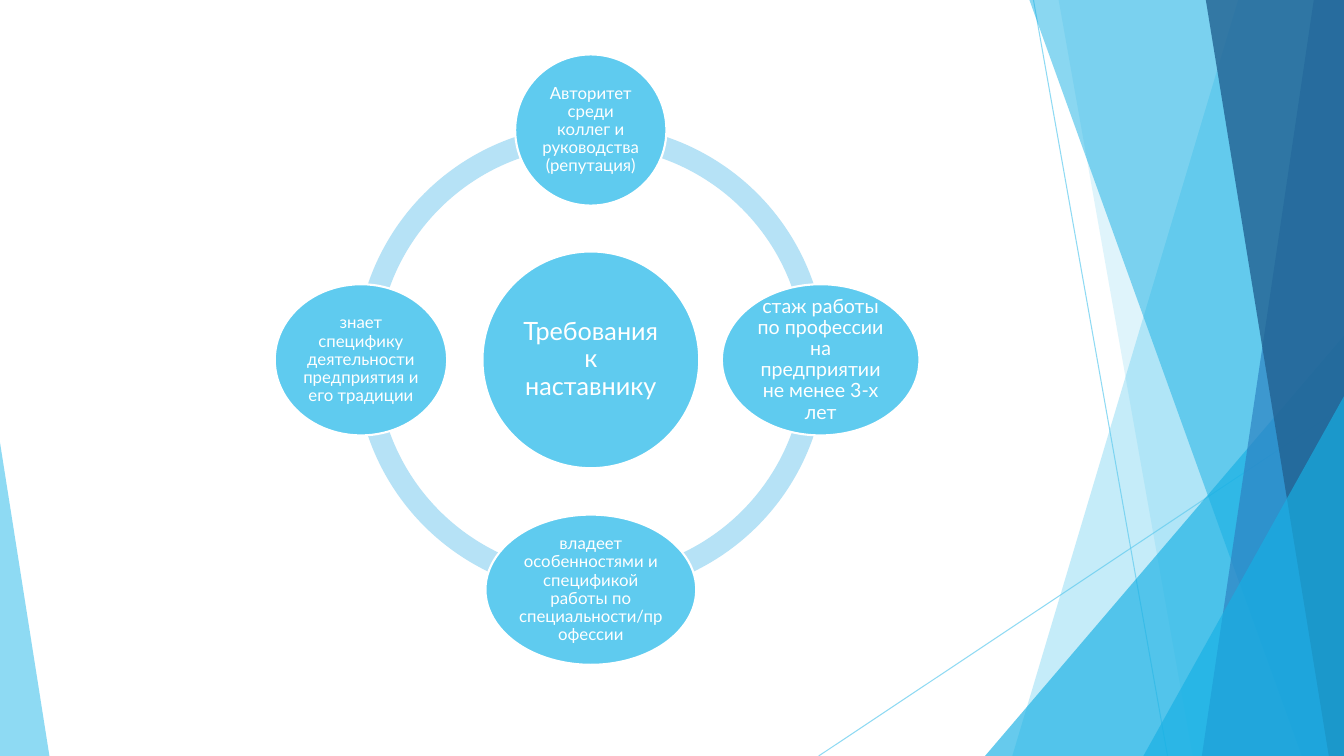
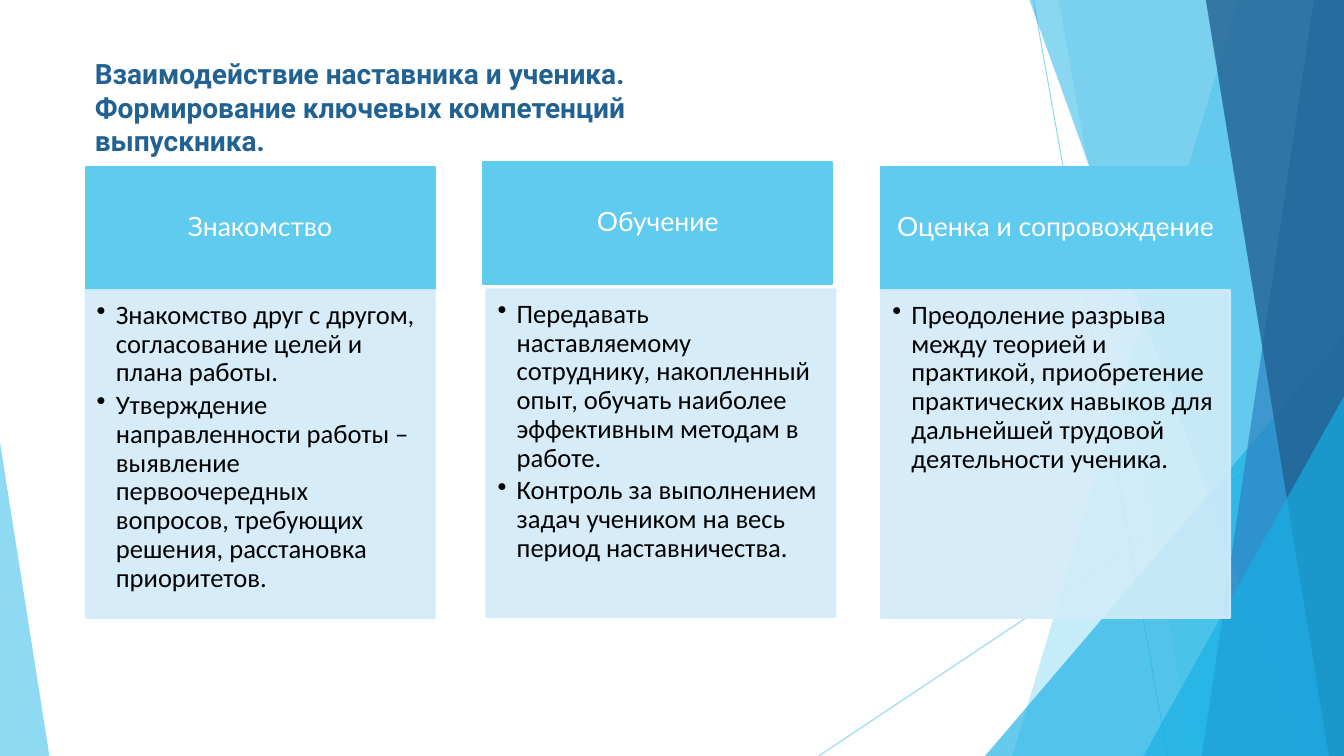
"""Build two slides on mentoring: requirements ring and stages of interaction."""
from math import cos, radians, sin

from lxml import etree
from pptx import Presentation
from pptx.dml.color import RGBColor
from pptx.enum.shapes import MSO_CONNECTOR, MSO_SHAPE
from pptx.enum.text import MSO_ANCHOR, MSO_AUTO_SIZE, PP_ALIGN
from pptx.oxml.ns import qn
from pptx.util import Inches, Pt

ELLIPSE, RECT = MSO_SHAPE.OVAL, MSO_SHAPE.RECTANGLE
TRIANGLE, ARC = MSO_SHAPE.ISOSCELES_TRIANGLE, MSO_SHAPE.BLOCK_ARC
STRAIGHT = MSO_CONNECTOR.STRAIGHT
TOP, MIDDLE = MSO_ANCHOR.TOP, MSO_ANCHOR.MIDDLE
LEFT, CENTER = PP_ALIGN.LEFT, PP_ALIGN.CENTER
NO_FIT = MSO_AUTO_SIZE.NONE

W, H = 13.33, 7.5
SKY, CYAN, BLUE, NAVY = "5FCBEF", "17B0E4", "2E83C3", "226292"
RING, PALE, WHITE, BLACK = "B6E2F6", "D2ECF9", "FFFFFF", "000000"

RAYS = [(10.25, 0, 11.58, H), (W, 4.03, 8.12, H)]
# Bands: colour, opacity, top x, bottom x. Wedges: colour, opacity, left, top, width, apex.
BACKDROP = [
    ("band", SKY, 36, (12.28, 10.04)),
    ("band", SKY, 20, (10.5, 11.83)),
    ("wedge", CYAN, 66, (9.77, 3.33, 3.56, 1)),
    ("band", CYAN, 50, (10.21, 12.91)),
    ("band", BLUE, 70, (13.03, 11.92)),
    ("band", NAVY, 80, (11.96, 13.18)),
    ("wedge", CYAN, 66, (11.34, 3.93, 1.99, 1)),
    ("wedge", SKY, 70, (0, 4.39, 0.49, 0)),
]

HUB = ("Требования к наставнику", 2.15, 2.15, 18)
NODES = [
    ("Авторитет среди коллег и руководства (репутация)", 1.5, 1.5, 12),
    ("стаж работы по профессии на предприятии не менее 3-х лет", 1.96, 1.5, 14),
    ("владеет особенностями и спецификой работы по специальности/профессии",
     2.09, 1.49, 12),
    ("знает специфику деятельности предприятия и его традиции", 1.71, 1.5, 12),
]
CX, CY, ORBIT, RING_SIZE = 5.86, 3.57, 2.28, 4.67

TITLE = ("Взаимодействие наставника и ученика. "
         "Формирование ключевых компетенций выпускника.")
STAGES = [
    ("Знакомство", (0, 0), (0, 0), [
        "Знакомство друг с другом, согласование целей и плана работы.",
        "Утверждение направленности работы – выявление первоочередных вопросов, "
        "требующих решения, расстановка приоритетов."]),
    ("Обучение", (0, -0.05), (0.03, -0.01), [
        "Передавать наставляемому сотруднику, накопленный опыт, обучать наиболее "
        "эффективным методам в работе.",
        "Контроль за выполнением задач учеником на весь период наставничества."]),
    ("Оценка и сопровождение", (0, 0), (0, 0), [
        "Преодоление разрыва между теорией и практикой, приобретение практических "
        "навыков для дальнейшей трудовой деятельности ученика."]),
]
CARD_X, CARD_PITCH, CARD_W = 0.85, 3.945, 3.46
HEAD_Y, HEAD_H, LIST_Y, LIST_H = 1.66, 1.21, 2.88, 3.25


def rgb(value):
    return RGBColor.from_string(value)


def set_alpha(shape, percent):
    for color in shape._element.spPr.iter(qn("a:srgbClr")):
        etree.SubElement(color, qn("a:alpha")).set("val", str(percent * 1000))


def paint(shape, fill, line=None, alpha=100):
    shape.shadow.inherit = False
    shape.fill.solid()
    shape.fill.fore_color.rgb = rgb(fill)
    if line:
        shape.line.color.rgb = rgb(line)
        shape.line.width = Pt(1.5)
    else:
        shape.line.fill.background()
    if alpha < 100:
        set_alpha(shape, alpha)
    return shape


def add_preset(s, kind, x, y, w, h, adjust=()):
    shape = s.shapes.add_shape(kind, Inches(x), Inches(y), Inches(w), Inches(h))
    for i, value in enumerate(adjust):
        shape.adjustments[i] = value
    return shape


def write(shape, texts, size, font, color, insets, anchor=MIDDLE, align=CENTER,
          bold=False, spacing=0.9, after=0, bullet=False):
    tf = shape.text_frame
    tf.word_wrap, tf.auto_size, tf.vertical_anchor = True, NO_FIT, anchor
    (tf.margin_left, tf.margin_top,
     tf.margin_right, tf.margin_bottom) = (Inches(v) for v in insets)
    tf.text = "\n".join(texts)
    for p in tf.paragraphs:
        p.alignment, p.line_spacing, p.space_after = align, spacing, Pt(after)
        for r in p.runs:
            r.font.size, r.font.name, r.font.bold = Pt(size), font, bold
            r.font.color.rgb = rgb(color)
        if bullet:
            pPr = p._p.get_or_add_pPr()
            pPr.set("marL", str(Inches(0.19)))
            pPr.set("indent", str(-Inches(0.19)))
            etree.SubElement(pPr, qn("a:buChar")).set("char", "•")


def add_band(s, top_x, bottom_x):
    points = [(Inches(x), Inches(y)) for x, y in
              ((top_x, 0), (W, 0), (W, H), (bottom_x, H))]
    builder = s.shapes.build_freeform(*points[0])
    builder.add_line_segments(points[1:], close=True)
    return builder.convert_to_shape()


def add_backdrop(prs, s):
    parts = []
    for ray in RAYS:
        line = s.shapes.add_connector(STRAIGHT, *(Inches(v) for v in ray))
        line.line.color.rgb = rgb(SKY)
        line.line.width = Pt(0.75)
        set_alpha(line, 70)
        etree.SubElement(line._element.spPr, qn("a:effectLst"))
        parts.append(line)
    for kind, color, alpha, place in BACKDROP:
        if kind == "band":
            shape = add_band(s, *place)
        else:
            x, y, w, apex = place
            shape = add_preset(s, TRIANGLE, x, y, w, H - y, [apex])
        parts.append(paint(shape, color, alpha=alpha))
    tree = prs.slide_master.element.cSld.spTree
    for i, part in enumerate(parts):
        tree.insert(2 + i, part._element)


def add_node(s, cx, cy, text, w, h, size):
    node = add_preset(s, ELLIPSE, cx - w / 2, cy - h / 2, w, h)
    write(paint(node, SKY, WHITE), [text], size, "Lato", WHITE, [0.02] * 4)


def build_requirements(s):
    quarter = 54
    for i in range(4):
        ends = [i * quarter, (i + 1) % 4 * quarter, 0.046]
        paint(add_preset(s, ARC, CX - RING_SIZE / 2, CY - RING_SIZE / 2,
                         RING_SIZE, RING_SIZE, ends), RING)
    add_node(s, CX, CY, *HUB)
    for i, node in enumerate(NODES):
        angle = radians(90 * i - 90)
        add_node(s, CX + ORBIT * cos(angle), CY + ORBIT * sin(angle), *node)


def build_stages(s):
    title = s.shapes.title
    title.left, title.top, title.width, title.height = (
        Inches(v) for v in (0.84, 0.51, 6.8, 1.11))
    write(title, [TITLE], 20, "Roboto", NAVY, (0.1, 0.05, 0.1, 0.05),
          TOP, LEFT, bold=True, spacing=1.0)
    for i, (name, head_shift, list_shift, items) in enumerate(STAGES):
        x = CARD_X + i * CARD_PITCH
        head = add_preset(s, RECT, x + head_shift[0], HEAD_Y + head_shift[1],
                          CARD_W, HEAD_H)
        write(paint(head, SKY, SKY), [name], 19, "Lato", WHITE,
              (0.15, 0.08, 0.15, 0.08))
        body = add_preset(s, RECT, x + list_shift[0], LIST_Y + list_shift[1],
                          CARD_W, LIST_H)
        write(paint(body, PALE, PALE, 90), items, 19, "Calibri", BLACK,
              (0.11, 0.11, 0.15, 0.17), TOP, LEFT, after=3, bullet=True)


def main():
    prs = Presentation()
    prs.slide_width, prs.slide_height = Inches(W), Inches(H)
    title_only, blank = prs.slide_layouts[5], prs.slide_layouts[6]
    s = prs.slides.add_slide(blank)
    add_backdrop(prs, s)
    build_requirements(s)
    build_stages(prs.slides.add_slide(title_only))
    prs.save("out.pptx")


if __name__ == "__main__":
    main()
